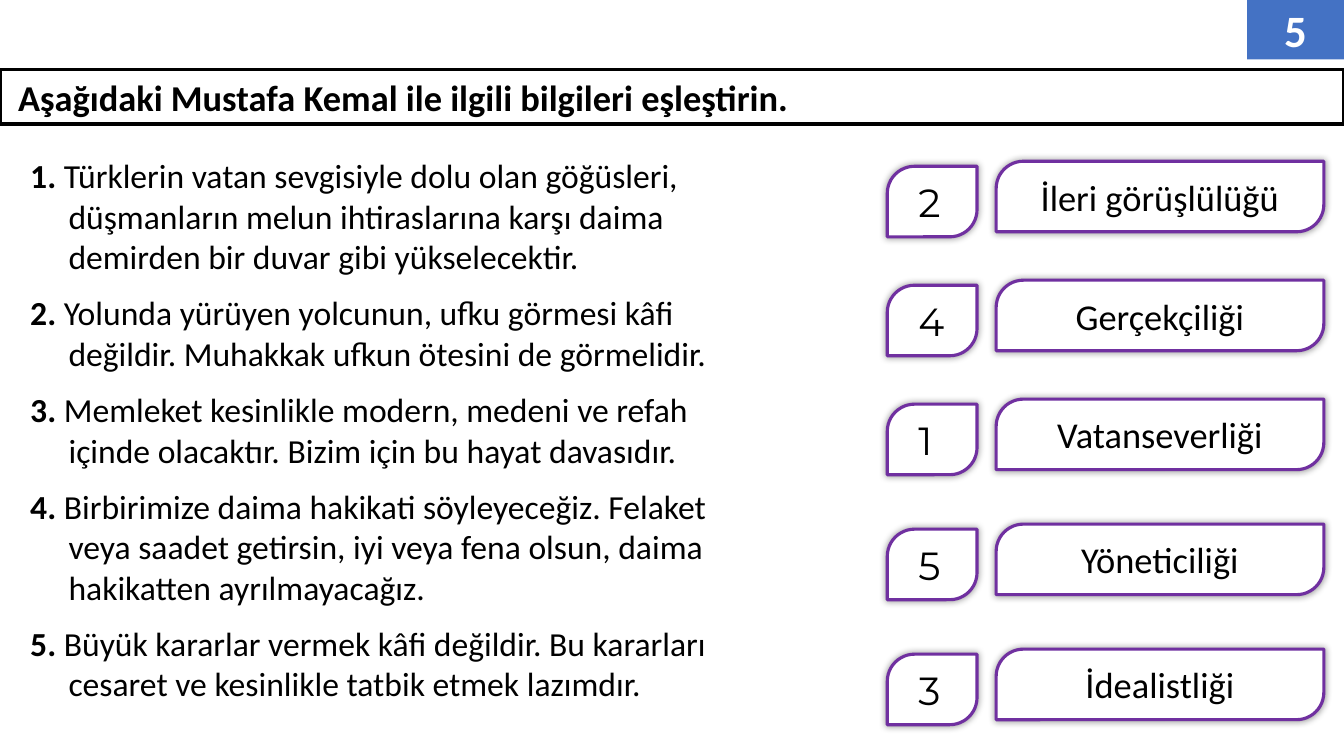
from lxml.etree import SubElement
from pptx import Presentation
from pptx.dml.color import RGBColor
from pptx.enum.shapes import MSO_SHAPE
from pptx.enum.text import MSO_ANCHOR, MSO_AUTO_SIZE, PP_ALIGN
from pptx.oxml.ns import qn
from pptx.util import Inches, Pt

COLORS = {"badge": "4472C4", "outline": "7030A0", "ink": "000000", "paper": "FFFFFF"}
WIDTH, HEIGHT = 13.33, 7.5
STATEMENTS = [
    "Türklerin vatan sevgisiyle dolu olan göğüsleri, düşmanların melun "
    "ihtiraslarına karşı daima demirden bir duvar gibi yükselecektir.",
    "Yolunda yürüyen yolcunun, ufku görmesi kâfi değildir. "
    "Muhakkak ufkun ötesini de görmelidir.",
    "Memleket kesinlikle modern, medeni ve refah içinde olacaktır. "
    "Bizim için bu hayat davasıdır.",
    "Birbirimize daima hakikati söyleyeceğiz. Felaket veya saadet getirsin, "
    "iyi veya fena olsun, daima hakikatten ayrılmayacağız.",
    "Büyük kararlar vermek kâfi değildir. Bu kararları cesaret ve kesinlikle "
    "tatbik etmek lazımdır.",
]
ANSWERS = [
    (1.6, "2", "İleri görüşlülüğü"),
    (2.78, "4", "Gerçekçiliği"),
    (3.96, "1", "Vatanseverliği"),
    (5.2, "5", "Yöneticiliği"),
    (6.44, "3", "İdealistliği"),
]


def color(name):
    """Return the named colour."""
    return RGBColor.from_string(COLORS[name])


def place(shape, box):
    """Move a shape to a box of left, top, width and height in inches."""
    shape.left, shape.top, shape.width, shape.height = map(Inches, box)


def set_insets(frame, left=0.1, top=0.05, right=0.1, bottom=0.05):
    """Set the text insets in inches and keep the text at its given size."""
    frame.auto_size = MSO_AUTO_SIZE.NONE
    frame.word_wrap = True
    frame.margin_left, frame.margin_top = Inches(left), Inches(top)
    frame.margin_right, frame.margin_bottom = Inches(right), Inches(bottom)


def style(para, size, ink="ink", name="Calibri", bold=None, align=PP_ALIGN.CENTER):
    """Set the alignment and font of a paragraph."""
    para.alignment = align
    para.font.size, para.font.name, para.font.bold = Pt(size), name, bold
    para.font.color.rgb = color(ink)


def add_badge(page, box, number):
    """Draw the page number badge."""
    badge = page.shapes.add_shape(MSO_SHAPE.RECTANGLE, *map(Inches, box))
    badge.shadow.inherit = False
    badge.fill.solid()
    badge.fill.fore_color.rgb = color("badge")
    badge.line.fill.background()
    badge.text_frame.text = number
    badge.text_frame.vertical_anchor = MSO_ANCHOR.MIDDLE
    style(badge.text_frame.paragraphs[0], 32, "paper", bold=True)


def fill_title(page, box, text):
    """Write the instruction in the outlined title bar."""
    title = page.shapes.title
    place(title, box)
    title.line.color.rgb = color("ink")
    title.line.width = Pt(2.25)
    title.text_frame.text = text
    title.text_frame.vertical_anchor = MSO_ANCHOR.MIDDLE
    set_insets(title.text_frame, left=0.18)
    style(title.text_frame.paragraphs[0], 26, bold=True, align=PP_ALIGN.LEFT)


def fill_statements(page, box):
    """List the numbered statements with a hanging indent."""
    body = page.placeholders[1]
    place(body, box)
    frame = body.text_frame
    set_insets(frame)
    hang = Inches(0.38)
    for number, statement in enumerate(STATEMENTS, 1):
        para = frame.paragraphs[0] if number == 1 else frame.add_paragraph()
        label = para.add_run()
        label.text, label.font.bold = f"{number}. ", True
        para.add_run().text = statement
        para.space_before, para.space_after = Pt(0), Pt(11.5)
        style(para, 24, align=PP_ALIGN.LEFT)
        properties = para._p.get_or_add_pPr()
        properties.set("marL", str(hang))
        properties.set("indent", str(-hang))
        properties.insert_element_before(
            properties.makeelement(qn("a:buNone")), "a:tabLst", "a:defRPr", "a:extLst")


def add_tile(page, box, text):
    """Draw a softly shadowed leaf-shaped tile and return it."""
    tile = page.shapes.add_shape(MSO_SHAPE.ROUND_2_DIAG_RECTANGLE, *map(Inches, box))
    tile.adjustments[0], tile.adjustments[1] = 0.386, 0
    tile.fill.solid()
    tile.fill.fore_color.rgb = color("paper")
    tile.line.color.rgb = color("outline")
    tile.line.width = Pt(2.25)
    tile.shadow.inherit = False
    effects = tile._element.spPr.find(qn("a:effectLst"))
    glow = SubElement(effects, qn("a:outerShdw"), blurRad=str(Pt(5)), dist="0", dir="0")
    shade = SubElement(glow, qn("a:srgbClr"), val=COLORS["ink"])
    SubElement(shade, qn("a:alpha"), val="40000")
    tile.text_frame.text = text
    tile.text_frame.vertical_anchor = MSO_ANCHOR.MIDDLE
    return tile


def add_answer(page, box, number, trait):
    """Draw one answer: a number tile and the trait it matches."""
    left, top, width, height = box
    number_width, gap, drop = 0.89, 0.19, 0.05
    trait_left = number_width + gap
    trait_tile = add_tile(page, (left + trait_left, top, width - trait_left, height), trait)
    set_insets(trait_tile.text_frame, top=0, bottom=0)
    style(trait_tile.text_frame.paragraphs[0], 26)
    number_tile = add_tile(page, (left, top + drop, number_width, height), number)
    set_insets(number_tile.text_frame, left=0.23, top=0, right=0, bottom=0)
    style(number_tile.text_frame.paragraphs[0], 28, name="Montserrat", align=PP_ALIGN.LEFT)


def main():
    """Build and save the matching exercise."""
    deck = Presentation()
    deck.slide_width, deck.slide_height = Inches(WIDTH), Inches(HEIGHT)
    page = deck.slides.add_slide(deck.slide_layouts[1])
    add_badge(page, (WIDTH - 0.96, 0, 0.96, 0.59), "5")
    fill_title(page, (0, 0.69, WIDTH, 0.54),
               "Aşağıdaki Mustafa Kemal ile ilgili bilgileri eşleştirin.")
    fill_statements(page, (0.2, 1.49, 7.25, 5.61))
    for top, number, trait in ANSWERS:
        add_answer(page, (8.8, top, 4.33, 0.7), number, trait)
    deck.save("out.pptx")


if __name__ == "__main__":
    main()
